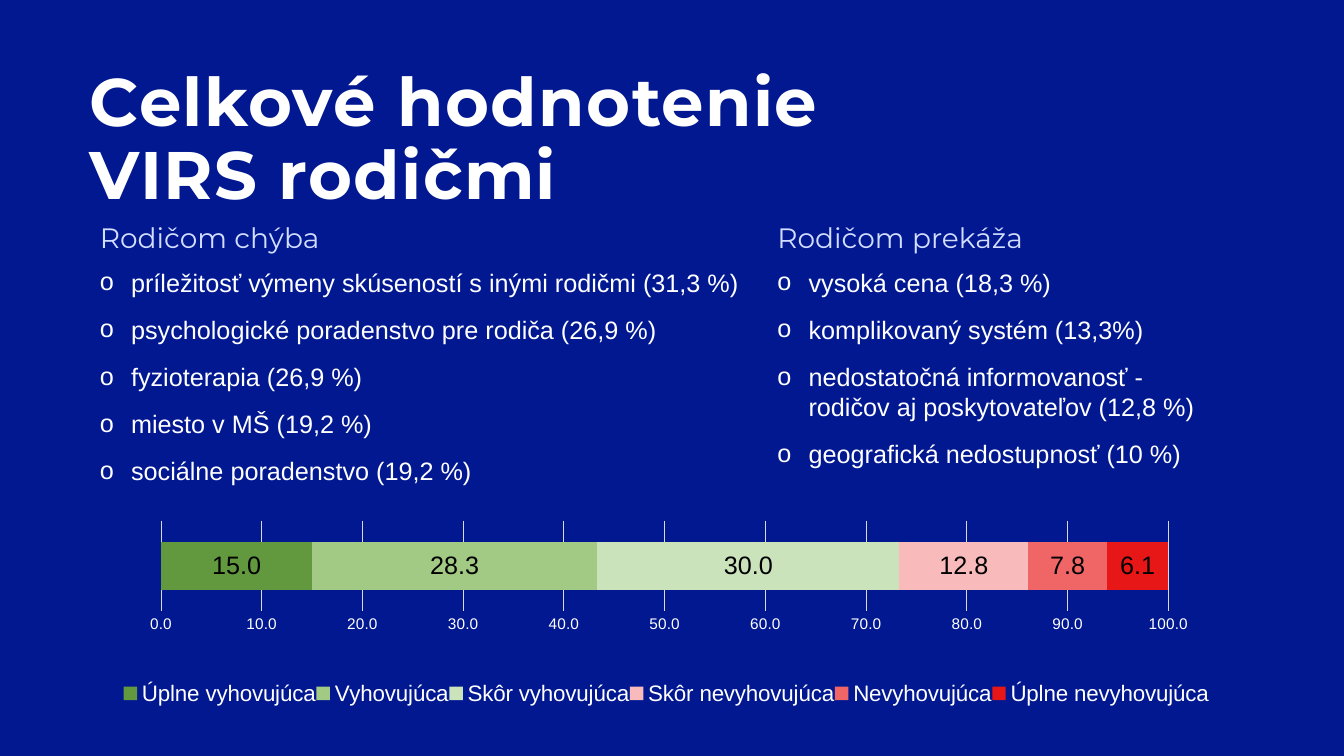
from dataclasses import dataclass

from lxml import etree
from pptx import Presentation
from pptx.chart.data import CategoryChartData
from pptx.dml.color import RGBColor
from pptx.enum.chart import XL_CHART_TYPE, XL_LEGEND_POSITION, XL_TICK_MARK
from pptx.enum.text import MSO_ANCHOR, MSO_AUTO_SIZE, PP_ALIGN
from pptx.oxml.ns import qn
from pptx.util import Inches, Pt

BAR_STACKED = XL_CHART_TYPE.BAR_STACKED
LEGEND_RIGHT = XL_LEGEND_POSITION.RIGHT
NO_TICKS = XL_TICK_MARK.NONE
ANCHOR_TOP = MSO_ANCHOR.TOP
NO_AUTOFIT = MSO_AUTO_SIZE.NONE
ALIGN_LEFT = PP_ALIGN.LEFT
COMPARISON_LAYOUT = 4


@dataclass(frozen=True)
class Theme:
    background: str = "011891"
    text: str = "FFFFFF"
    heading: str = "D3DDFE"
    value: str = "000000"
    grid: str = "D9D9D9"
    heading_font: str = "Montserrat"
    body_font: str = "Arial"
    title_size: int = 48
    heading_size: int = 20
    body_size: int = 18
    legend_size: int = 16
    axis_size: int = 11


THEME = Theme()

MISSING = [
    "príležitosť výmeny skúseností s inými rodičmi (31,3 %)",
    "psychologické poradenstvo pre rodiča (26,9 %)",
    "fyzioterapia (26,9 %)",
    "miesto v MŠ (19,2 %)",
    "sociálne poradenstvo (19,2 %)",
]
OBSTACLES = [
    "vysoká cena (18,3 %)",
    "komplikovaný systém (13,3%)",
    "nedostatočná informovanosť - rodičov aj poskytovateľov (12,8 %)",
    "geografická nedostupnosť (10 %)",
]
RATINGS = [
    ("Úplne vyhovujúca", 15.0, "62983E"),
    ("Vyhovujúca", 28.3, "A2CA84"),
    ("Skôr vyhovujúca", 30.0, "CAE3BB"),
    ("Skôr nevyhovujúca", 12.8, "F8BABA"),
    ("Nevyhovujúca", 7.8, "F06666"),
    ("Úplne nevyhovujúca", 6.1, "E71717"),
]


def style_font(font, name, size, color, bold=False):
    font.name = name
    font.size = Pt(size)
    font.bold = bold
    font.color.rgb = RGBColor.from_string(color)


def place(shape, left, top, width, height):
    shape.left, shape.top = Inches(left), Inches(top)
    shape.width, shape.height = Inches(width), Inches(height)
    text_frame = shape.text_frame
    text_frame.word_wrap = True
    text_frame.auto_size = NO_AUTOFIT
    text_frame.vertical_anchor = ANCHOR_TOP
    return text_frame


def fill_title(shape, text):
    text_frame = place(shape, 0.89, 0.68, 11.25, 1.46)
    text_frame.margin_left = text_frame.margin_right = 0
    text_frame.margin_top = text_frame.margin_bottom = 0
    text_frame.text = text
    paragraph = text_frame.paragraphs[0]
    paragraph.alignment = ALIGN_LEFT
    paragraph.line_spacing = 0.9
    for run in paragraph.runs:
        style_font(run.font, THEME.heading_font, THEME.title_size, THEME.text, True)
        run.font._element.set("spc", "100")


def fill_heading(shape, text, left):
    text_frame = place(shape, left, 2.14, 3.21, 0.44)
    text_frame.text = text
    paragraph = text_frame.paragraphs[0]
    paragraph.space_before = Pt(0)
    style_font(paragraph.runs[0].font, THEME.heading_font, THEME.heading_size, THEME.heading)


def add_bullet(paragraph):
    properties = paragraph._p.get_or_add_pPr()
    properties.set("marL", str(Inches(0.31)))
    properties.set("indent", str(-Inches(0.31)))
    etree.SubElement(properties, qn("a:buFont")).set("typeface", THEME.body_font)
    etree.SubElement(properties, qn("a:buChar")).set("char", "o")


def fill_list(shape, items, left, width, height):
    text_frame = place(shape, left, 2.6, width, height)
    text_frame.text = "\n".join(items)
    for index, paragraph in enumerate(text_frame.paragraphs):
        add_bullet(paragraph)
        paragraph.space_before = Pt(12 if index else 0)
        style_font(paragraph.runs[0].font, THEME.body_font, THEME.body_size, THEME.text)


def make_layout(left, top, width, height, inner=False):
    layout = etree.Element(qn("c:layout"))
    manual = etree.SubElement(layout, qn("c:manualLayout"))
    settings = [("xMode", "edge"), ("yMode", "edge"),
                ("x", left), ("y", top), ("w", width), ("h", height)]
    if inner:
        settings.insert(0, ("layoutTarget", "inner"))
    for tag, value in settings:
        etree.SubElement(manual, qn(f"c:{tag}")).set("val", str(value))
    return layout


def style_axes(chart):
    chart.category_axis.visible = False
    axis = chart.value_axis
    axis.minimum_scale, axis.maximum_scale, axis.major_unit = 0, 100, 10
    axis.major_tick_mark = axis.minor_tick_mark = NO_TICKS
    axis.format.line.fill.background()
    axis.has_major_gridlines = True
    grid_line = axis.major_gridlines.format.line
    grid_line.width = Pt(0.75)
    grid_line.color.rgb = RGBColor.from_string(THEME.grid)
    axis.tick_labels.number_format = "0.0"
    axis.tick_labels.number_format_is_linked = False
    style_font(axis.tick_labels.font, THEME.body_font, THEME.axis_size, THEME.text)


def style_series(series, color):
    series.format.fill.solid()
    series.format.fill.fore_color.rgb = RGBColor.from_string(color)
    labels = series.data_labels
    labels.show_value = True
    labels.number_format = "0.0"
    labels.number_format_is_linked = False
    style_font(labels.font, THEME.body_font, THEME.body_size, THEME.value)


def style_legend(chart):
    chart.has_legend = True
    legend = chart.legend
    legend.position = LEGEND_RIGHT
    legend.include_in_layout = False
    style_font(legend.font, THEME.body_font, THEME.legend_size, THEME.text)
    element = legend._element
    for layout in element.findall(qn("c:layout")):
        element.remove(layout)
    element.find(qn("c:legendPos")).addnext(make_layout(0, 0.74, 1, 0.14))


def add_rating_chart(slide):
    data = CategoryChartData(number_format="0.0")
    data.categories = ["1"]
    for name, value, _ in RATINGS:
        data.add_series(name, [value])
    chart = slide.shapes.add_chart(
        BAR_STACKED, Inches(1.22), Inches(4.96), Inches(10.8), Inches(2.37), data
    ).chart
    chart.has_title = False
    style_font(chart.font, THEME.body_font, THEME.body_size, THEME.value)
    plot = chart.plots[0]
    plot.vary_by_categories = False
    plot.gap_width, plot.overlap = 90, 100
    for series, (_, _, color) in zip(plot.series, RATINGS):
        style_series(series, color)
    style_axes(chart)
    style_legend(chart)
    plot_area = plot._element.getparent()
    for layout in plot_area.findall(qn("c:layout")):
        plot_area.remove(layout)
    plot_area.insert(0, make_layout(0.035, 0.087, 0.927, 0.379, inner=True))


def main():
    presentation = Presentation()
    presentation.slide_width, presentation.slide_height = Inches(13.33), Inches(7.5)
    slide = presentation.slides.add_slide(presentation.slide_layouts[COMPARISON_LAYOUT])
    slide.background.fill.solid()
    slide.background.fill.fore_color.rgb = RGBColor.from_string(THEME.background)
    title, left_heading, left_list, right_heading, right_list = slide.placeholders
    fill_title(title, "Celkové hodnotenie\vVIRS rodičmi")
    fill_heading(left_heading, "Rodičom chýba", 0.89)
    fill_list(left_list, MISSING, 0.89, 6.6, 2.29)
    fill_heading(right_heading, "Rodičom prekáža", 7.61)
    fill_list(right_list, OBSTACLES, 7.61, 4.4, 2.12)
    add_rating_chart(slide)
    presentation.save("out.pptx")


if __name__ == "__main__":
    main()
